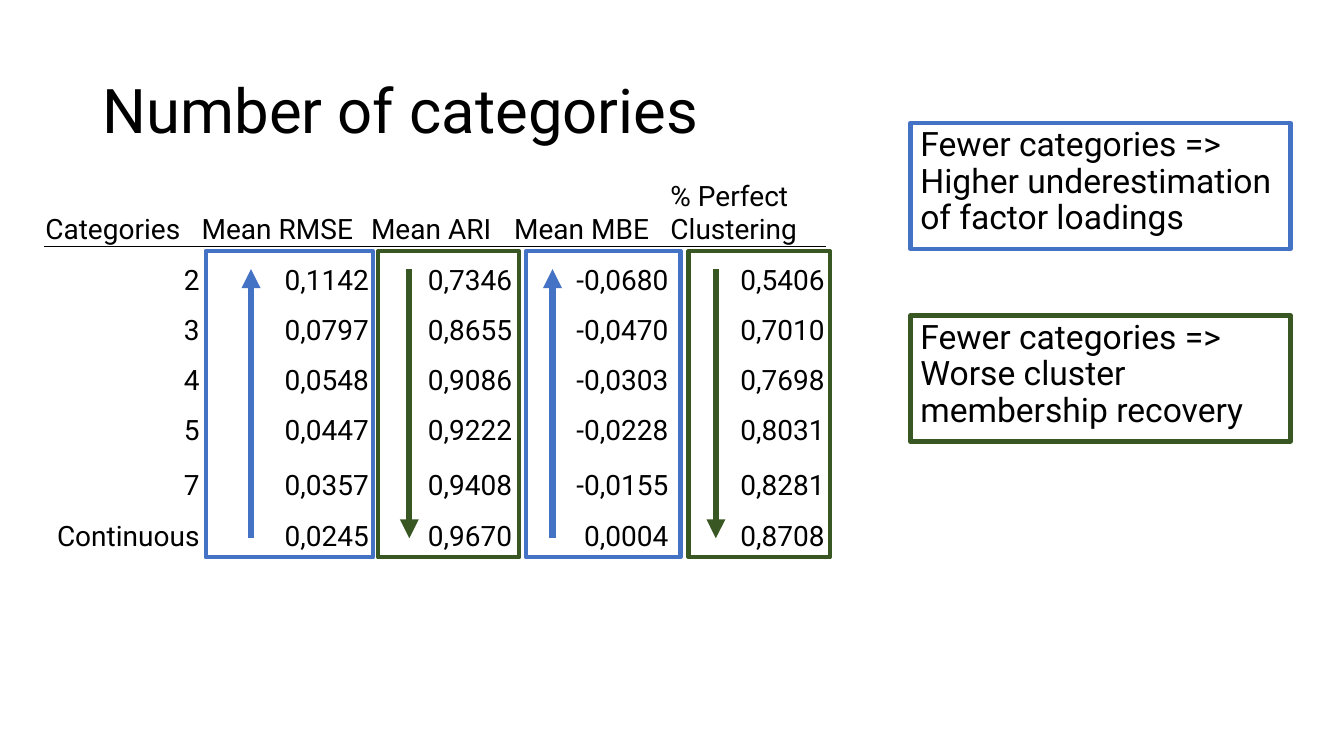
from dataclasses import dataclass

from lxml.etree import SubElement
from pptx import Presentation
from pptx.dml.color import RGBColor
from pptx.enum.shapes import MSO_CONNECTOR as Connector, MSO_SHAPE as Preset
from pptx.enum.text import MSO_ANCHOR as Anchor, PP_ALIGN as Align
from pptx.oxml import parse_xml
from pptx.oxml.ns import nsdecls, qn
from pptx.util import Emu, Pt

TITLE = "Number of categories"
HEADER = ["Categories", "Mean RMSE", "Mean ARI", "Mean MBE", "% Perfect Clustering"]
RESULTS = [
    ["2", "0,1142", "0,7346", "-0,0680", "0,5406"],
    ["3", "0,0797", "0,8655", "0,9086", "0,7010"],
    ["4", "0,0548", "0,9086", "-0,0303", "0,7698"],
    ["5", "0,0447", "0,9222", "-0,0228", "0,8031"],
    ["7", "0,0357", "0,9408", "-0,0155", "0,8281"],
    ["Continuous", "0,0245", "0,9670", "0,0004", "0,8708"],
]
RESULTS[1][3] = "-0,0470"


@dataclass(frozen=True)
class Theme:
    font: str = "Roboto"
    text: str = "000000"
    loadings: str = "4472C4"
    recovery: str = "385723"
    title_size: int = 44
    note_size: int = 24
    table_size: int = 20
    frame_width: float = 3
    arrow_width: float = 4.5
    rule_width: float = 1


THEME = Theme()

NOTES = [
    ("Fewer categories => Higher underestimation of factor loadings", THEME.loadings),
    ("Fewer categories => Worse cluster membership recovery", THEME.recovery),
]
# left, width, arrow x, arrow points up, colour
TRENDS = [
    (204, 166, 249, True, THEME.loadings),
    (375, 140, 406, False, THEME.recovery),
    (522, 153, 548, True, THEME.loadings),
    (683, 140, 710, False, THEME.recovery),
]

# Layout in px, 100 to the inch
SLIDE_SIZE = (1333, 750)
TITLE_BOX = (92, 40, 1150, 145)
TABLE_LEFT, TABLE_TOP = 44, 177
COLUMN_WIDTHS = [155, 168, 142, 155, 155]
ROW_HEIGHTS = [60, 50, 50, 50, 49, 55, 50]
FRAME_TOP, FRAME_HEIGHT = 249, 304
ARROW_TOP, ARROW_BOTTOM = 267, 534
NOTE_LEFT, NOTE_TOP, NOTE_WIDTH, NOTE_HEIGHT, NOTE_PITCH = 903, 122, 377, 125, 191


def px(length):
    return Emu(length * 9144)


def write(frame, text, *, size, align=Align.LEFT, line_spacing=None, before=0):
    frame.word_wrap = True
    paragraph = frame.paragraphs[0]
    paragraph.alignment = align
    paragraph.line_spacing = line_spacing
    paragraph.space_before = Pt(before)
    run = paragraph.add_run()
    run.text = text
    run.font.name = THEME.font
    run.font.size = Pt(size)
    run.font.color.rgb = RGBColor.from_string(THEME.text)


def set_line(line, colour, width):
    line.color.rgb = RGBColor.from_string(colour)
    line.width = Pt(width)


def add_frame(slide, left, top, width, height, colour):
    shape = slide.shapes.add_shape(Preset.RECTANGLE, *map(px, (left, top, width, height)))
    shape.shadow.inherit = False
    shape.fill.background()
    set_line(shape.line, colour, THEME.frame_width)
    return shape


def add_arrow(slide, x, start, end, colour):
    arrow = slide.shapes.add_connector(Connector.STRAIGHT, *map(px, (x, start, x, end)))
    set_line(arrow.line, colour, THEME.arrow_width)
    SubElement(arrow.line._get_or_add_ln(), qn("a:tailEnd"), type="triangle")
    SubElement(arrow._element.spPr, qn("a:effectLst"))


def add_rule(cell, side):
    """Draw one border of a cell; side is T or B."""
    cell._tc.get_or_add_tcPr().insert(0, parse_xml(
        f'<a:ln{side} {nsdecls("a")} w="{Pt(THEME.rule_width)}"><a:solidFill>'
        f'<a:srgbClr val="{THEME.text}"/></a:solidFill></a:ln{side}>'))


def add_results(slide):
    rows = [HEADER, *RESULTS]
    table = slide.shapes.add_table(
        len(rows), len(HEADER), px(TABLE_LEFT), px(TABLE_TOP),
        px(sum(COLUMN_WIDTHS)), px(sum(ROW_HEIGHTS))).table
    table.first_row = table.horz_banding = False
    for column, width in zip(table.columns, COLUMN_WIDTHS):
        column.width = px(width)
    for index, (row, height, values) in enumerate(zip(table.rows, ROW_HEIGHTS, rows)):
        row.height = px(height)
        for cell, value in zip(row.cells, values):
            cell.fill.background()
            cell.vertical_anchor = Anchor.BOTTOM
            cell.margin_left = cell.margin_right = cell.margin_top = px(1)
            cell.margin_bottom = 0
            write(cell.text_frame, value, size=THEME.table_size,
                  align=Align.RIGHT if index else Align.LEFT)
            if index < 2:
                add_rule(cell, "BT"[index])


def main():
    presentation = Presentation()
    presentation.slide_width, presentation.slide_height = map(px, SLIDE_SIZE)
    slide = presentation.slides.add_slide(presentation.slide_layouts[6])

    title = slide.shapes.add_textbox(*map(px, TITLE_BOX)).text_frame
    title.vertical_anchor = Anchor.MIDDLE
    write(title, TITLE, size=THEME.title_size, line_spacing=0.9)

    add_results(slide)
    for left, width, arrow_x, upward, colour in TRENDS:
        add_frame(slide, left, FRAME_TOP, width, FRAME_HEIGHT, colour)
        start, end = (ARROW_BOTTOM, ARROW_TOP) if upward else (ARROW_TOP, ARROW_BOTTOM)
        add_arrow(slide, arrow_x, start, end, colour)

    for index, (text, colour) in enumerate(NOTES):
        note = add_frame(slide, NOTE_LEFT, NOTE_TOP + index * NOTE_PITCH,
                         NOTE_WIDTH, NOTE_HEIGHT, colour)
        note.text_frame.vertical_anchor = Anchor.TOP
        write(note.text_frame, text, size=THEME.note_size, line_spacing=0.9, before=5)

    presentation.save("out.pptx")


if __name__ == "__main__":
    main()
